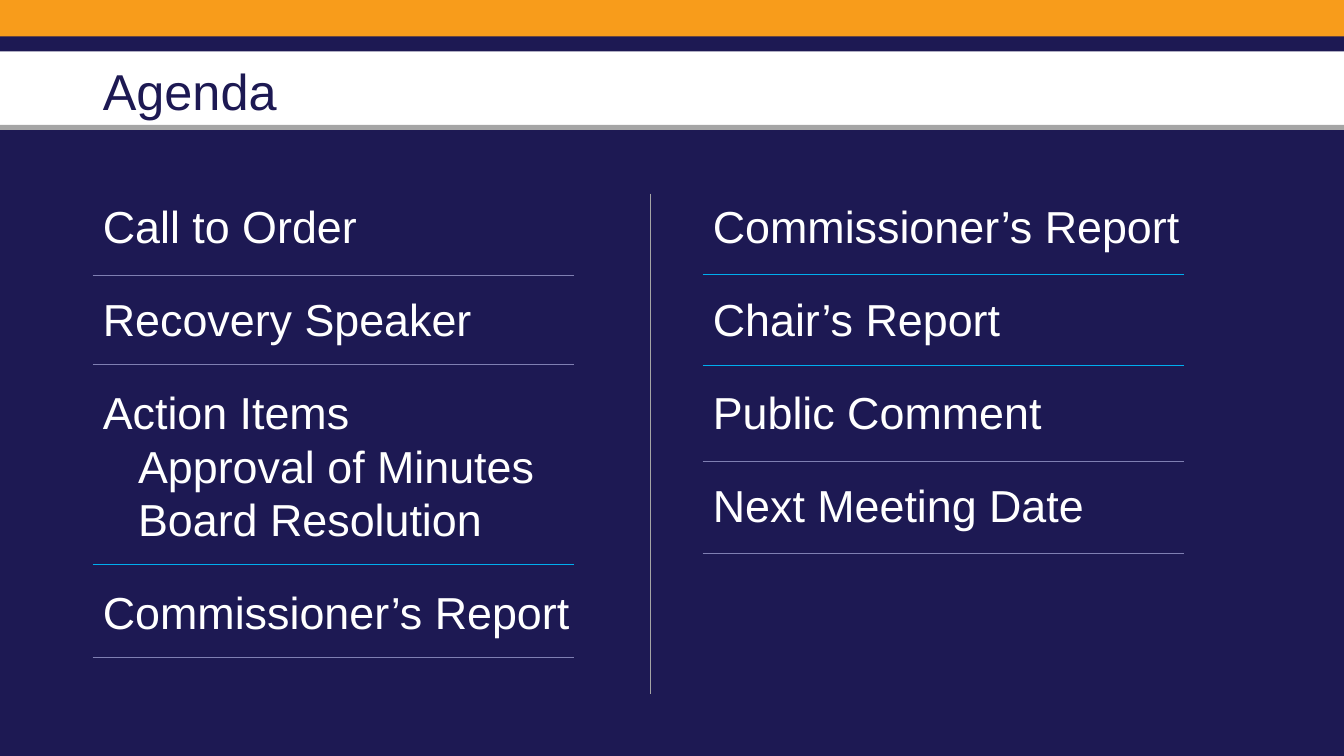
from lxml import etree
from pptx import Presentation
from pptx import util as u
from pptx.dml.color import RGBColor
from pptx.enum import shapes, text
from pptx.oxml.ns import qn

ORANGE = RGBColor(0xF8, 0x9C, 0x1B)
NAVY = RGBColor(0x1D, 0x19, 0x53)
GREY = RGBColor(0xA5, 0xA5, 0xA5)
WHITE = RGBColor(0xFF, 0xFF, 0xFF)
CYAN = RGBColor(0x00, 0xAD, 0xEE)
LILAC = RGBColor(0x7F, 0x7F, 0xB2)

WIDTH, HEIGHT = 13.33, 7.5
RULE_WIDTH = 4.77
BANDS = [(0, 0.4, ORANGE), (0.36, 0.15, NAVY), (1.24, 0.06, GREY), (1.29, 6.21, NAVY)]

# Each item is a heading followed by its indented sub-items.
LEFT_ITEMS = [["Call to Order"], ["Recovery Speaker"],
              ["Action Items", "Approval of Minutes", "Board Resolution"],
              ["Commissioner’s Report"]]
RIGHT_ITEMS = [["Commissioner’s Report"], ["Chair’s Report"],
               ["Public Comment"], ["Next Meeting Date"]]
LEFT_RULES = [(2.73, LILAC), (3.61, LILAC), (5.6, CYAN), (6.52, LILAC)]
RIGHT_RULES = [(2.72, CYAN), (3.62, CYAN), (4.58, LILAC), (5.49, LILAC)]


def add_band(s, top, height, color):
    sp = s.shapes.add_shape(shapes.MSO_SHAPE.RECTANGLE, 0, u.Inches(top),
                            u.Inches(WIDTH), u.Inches(height))
    sp.shadow.inherit = False
    sp.fill.solid()
    sp.fill.fore_color.rgb = color
    sp.line.fill.background()


def add_rule(s, x1, y1, x2, y2, color):
    cx = s.shapes.add_connector(shapes.MSO_CONNECTOR.STRAIGHT,
                                *map(u.Inches, (x1, y1, x2, y2)))
    cx.line.color.rgb = color
    cx.line.width = u.Pt(0.5)
    etree.SubElement(cx._element.spPr, qn("a:effectLst"))


def place(s, sp, left, top, width, height, anchor):
    """Move a placeholder to its box, in front of the bands."""
    sp.left, sp.top, sp.width, sp.height = map(u.Inches, (left, top, width, height))
    s.shapes._spTree.append(sp._element)
    tf = sp.text_frame
    tf.word_wrap = True
    tf.auto_size = text.MSO_AUTO_SIZE.NONE
    tf.vertical_anchor = anchor
    return tf


def set_font(p, size, color):
    p.alignment = text.PP_ALIGN.LEFT
    p.font.name = "Arial"
    p.font.size = u.Pt(size)
    p.font.color.rgb = color


def add_title(s, left, top, width, height):
    tf = place(s, s.shapes.title, left, top, width, height, text.MSO_ANCHOR.MIDDLE)
    tf.text = "Agenda"
    p = tf.paragraphs[0]
    p.line_spacing = 0.9
    set_font(p, 36, NAVY)


def add_column(s, sp, items, rules, left, top, width, height):
    tf = place(s, sp, left, top, width, height, text.MSO_ANCHOR.TOP)
    lines = [(line, i > 0, i == len(item) - 1)
             for item in items for i, line in enumerate(item)]
    tf.text = "\n".join(line for line, _, _ in lines)
    for p, (_, is_sub, is_last) in zip(tf.paragraphs, lines):
        set_font(p, 32, WHITE)
        p.line_spacing = u.Pt(38.4)
        p.space_before = u.Pt(0 if is_sub else 10)
        p.space_after = u.Pt(18 if is_last else 0)
        pPr = p._p.get_or_add_pPr()
        pPr.set("marL", str(u.Inches(0.35 if is_sub else 0)))
        pPr.set("indent", "0")
        pPr.insert_element_before(pPr.makeelement(qn("a:buNone"), {}),
                                  "a:tabLst", "a:defRPr", "a:extLst")
    for y, color in rules:
        add_rule(s, left, y, left + RULE_WIDTH, y, color)


def add_agenda(prs):
    s = prs.slides.add_slide(prs.slide_layouts.get_by_name("Two Content"))
    title, left_body, right_body = s.placeholders
    for band in BANDS:
        add_band(s, *band)
    add_title(s, 0.92, 0.21, 11.92, 1.45)
    add_column(s, left_body, LEFT_ITEMS, LEFT_RULES, 0.92, 1.92, 5.14, 5.67)
    add_column(s, right_body, RIGHT_ITEMS, RIGHT_RULES, 6.97, 1.92, 5.44, 4.76)
    add_rule(s, 6.45, 1.92, 6.45, 6.89, GREY)


def main():
    prs = Presentation()
    prs.slide_width, prs.slide_height = u.Inches(WIDTH), u.Inches(HEIGHT)
    add_agenda(prs)
    prs.save("out.pptx")


if __name__ == "__main__":
    main()
